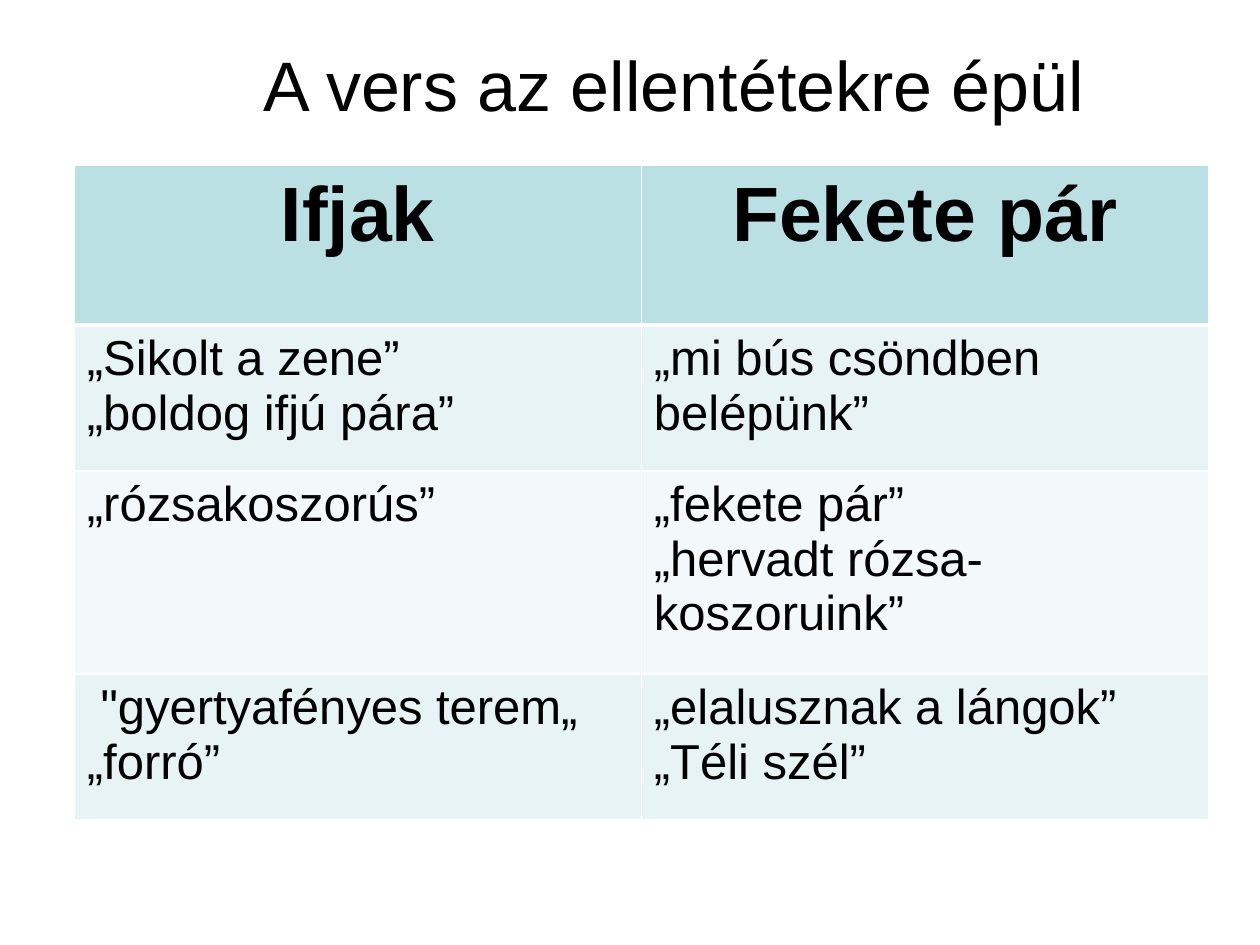
"""Build a slide that sets the poem's two couples against each other."""
from dataclasses import dataclass

from lxml.etree import SubElement
from pptx import Presentation
from pptx.dml.color import RGBColor
from pptx.enum.text import PP_ALIGN
from pptx.oxml.ns import qn
from pptx.util import Inches, Pt


@dataclass(frozen=True)
class Theme:
    """Colours and type sizes of the slide."""
    font: str = "Arial"
    ink: str = "000000"
    rule: str = "FFFFFF"
    head: str = "BBE0E3"
    bands: tuple = ("E7F3F4", "F3F9FA")
    title: int = 40
    label: int = 44
    body: int = 28


THEME = Theme()
WIDTH, HEIGHT = Inches(10), Inches(7.5)
HEADS = ("Ifjak", "Fekete pár")
PAIRS = (
    ("„Sikolt a zene”\n„boldog ifjú pára”", "„mi bús csöndben belépünk”"),
    ("„rózsakoszorús”", "„fekete pár”\n„hervadt rózsa-koszoruink”"),
    (" \"gyertyafényes terem„\n„forró”", "„elalusznak a lángok”\n„Téli szél”"),
)
ROWS = (1.27, 1.16, 1.61, 1.16)


def write(frame, text, size, bold=False, align=PP_ALIGN.LEFT):
    """Fill a text frame and format all of its runs."""
    frame.text = text
    for para in frame.paragraphs:
        para.alignment = align
        for run in para.runs:
            font = run.font
            font.name, font.size, font.bold = THEME.font, Pt(size), bold
            font.color.rgb = RGBColor.from_string(THEME.ink)


def edge(cell, sides):
    """Draw the cell's borders from a mapping of side to points."""
    props = cell._tc.get_or_add_tcPr()
    for side, width in sides.items():
        line = SubElement(props, qn(f"a:ln{side}"), w=str(Pt(width)))
        fill = SubElement(line, qn("a:solidFill"))
        SubElement(fill, qn("a:srgbClr"), val=THEME.rule)


def paint(cell, row):
    """Give a cell the borders and fill of its row."""
    edge(cell, {"L": 1, "R": 1, "T": 3 if row == 1 else 1, "B": 1 if row else 3})
    shade = THEME.bands[(row - 1) % 2] if row else THEME.head
    cell.fill.solid()
    cell.fill.fore_color.rgb = RGBColor.from_string(shade)


def add_title(slide, text):
    """Add the centred title line."""
    box = slide.shapes.add_textbox(
        int(WIDTH * 0.185), Inches(0.28), int(WIDTH * 0.7), Inches(0.77))
    box.text_frame.word_wrap = True
    write(box.text_frame, text, THEME.title, align=PP_ALIGN.CENTER)


def add_grid(slide, heads, pairs):
    """Add the table of contrasts under its two headings."""
    table = slide.shapes.add_table(
        len(ROWS), len(heads), Inches(0.59), Inches(1.31),
        int(WIDTH * 0.9), Inches(sum(ROWS))).table
    for row, texts in enumerate((heads, *pairs)):
        table.rows[row].height = Inches(ROWS[row])
        for col, text in enumerate(texts):
            cell = table.cell(row, col)
            paint(cell, row)
            if row:
                write(cell.text_frame, text, THEME.body)
            else:
                write(cell.text_frame, text, THEME.label, True, PP_ALIGN.CENTER)


def main():
    """Build and save the slide."""
    deck = Presentation()
    deck.slide_width, deck.slide_height = WIDTH, HEIGHT
    slide = deck.slides.add_slide(deck.slide_layouts[6])
    add_grid(slide, HEADS, PAIRS)
    add_title(slide, "A vers az ellentétekre épül")
    deck.save("out.pptx")


if __name__ == "__main__":
    main()
